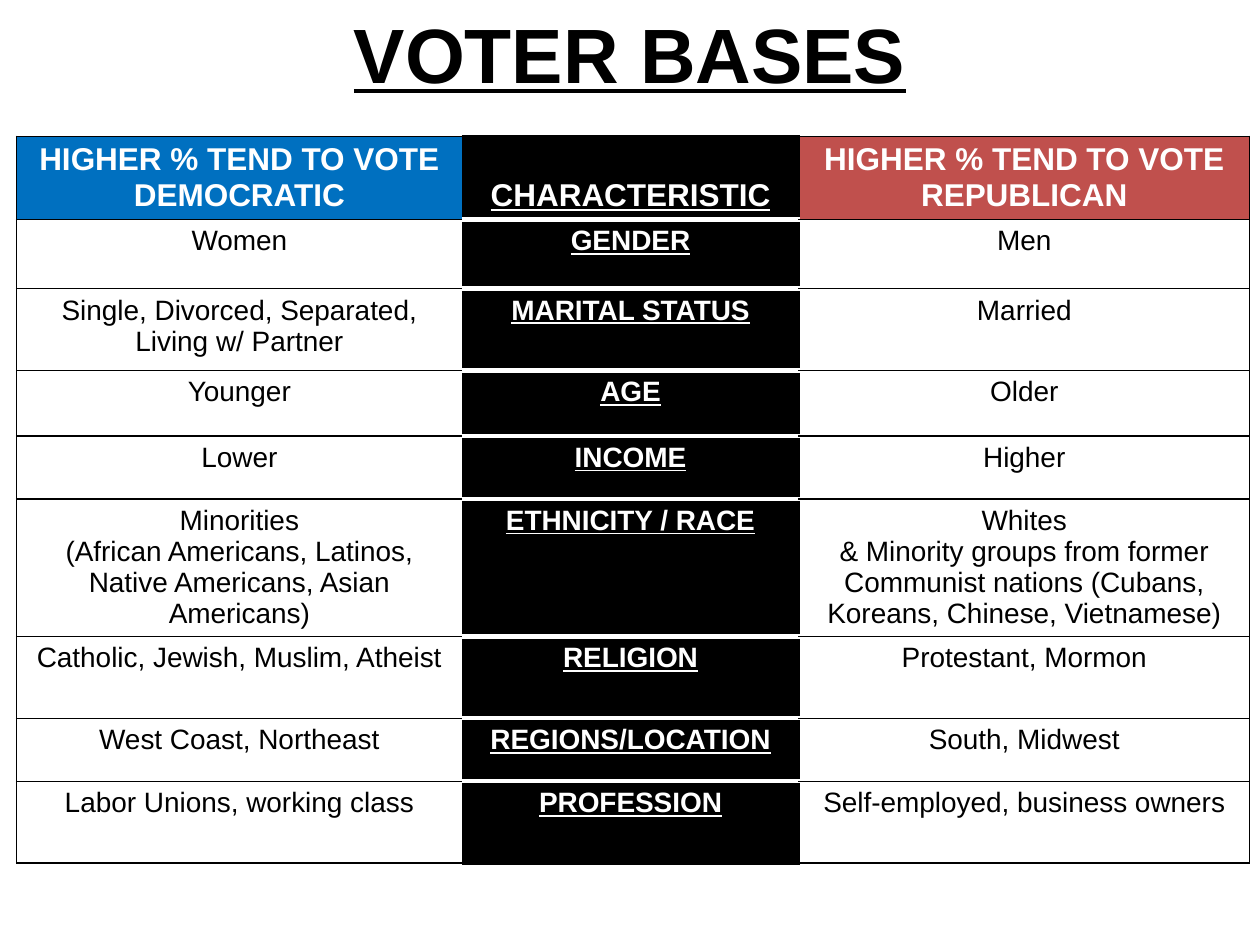
from lxml.etree import SubElement
from pptx import Presentation
from pptx.dml.color import RGBColor
from pptx.enum.text import MSO_ANCHOR, PP_ALIGN
from pptx.oxml.ns import qn
from pptx.util import Inches, Pt

BLACK, WHITE, BLUE, RED = "000000", "FFFFFF", "0070C0", "C0504D"
COLUMN_WIDTHS = [3.54, 2.67, 3.58]
ROW_HEIGHTS = [0.65, 0.55, 0.65, 0.52, 0.5, 1.09, 0.65, 0.5, 0.65]
ROWS = [
    ("HIGHER % TEND TO VOTE DEMOCRATIC", "CHARACTERISTIC",
     "HIGHER % TEND TO VOTE REPUBLICAN"),
    ("Women", "GENDER", "Men"),
    ("Single, Divorced, Separated, Living w/ Partner", "MARITAL STATUS", "Married"),
    ("Younger", "AGE", "Older"),
    ("Lower", "INCOME", "Higher"),
    ("Minorities\n(African Americans, Latinos, Native Americans, Asian Americans)",
     "ETHNICITY / RACE",
     "Whites\n& Minority groups from former Communist nations "
     "(Cubans, Koreans, Chinese, Vietnamese)"),
    ("Catholic, Jewish, Muslim, Atheist", "RELIGION", "Protestant, Mormon"),
    ("West Coast, Northeast", "REGIONS/LOCATION", "South, Midwest"),
    ("Labor Unions, working class", "PROFESSION", "Self-employed, business owners"),
]


def rgb(value):
    return RGBColor.from_string(value)


def style_text(frame, size, color, bold, underline):
    for paragraph in frame.paragraphs:
        paragraph.alignment = PP_ALIGN.CENTER
        font = paragraph.font
        font.name, font.size = "Arial", Pt(size)
        font.bold, font.underline = bold, underline
        font.color.rgb = rgb(color)


def set_borders(cell, left, right, top, bottom):
    properties = cell._tc.get_or_add_tcPr()
    for side, (color, width) in zip("LRTB", (left, right, top, bottom)):
        line = SubElement(properties, qn(f"a:ln{side}"), w=str(Pt(width)))
        SubElement(SubElement(line, qn("a:solidFill")), qn("a:srgbClr"), val=color)


def style_cell(cell, row, column):
    header, middle = row == 0, column == 1
    thin, inner, gap = (BLACK, 0.75), (BLACK, 1), (WHITE, 3)
    if middle:
        top = inner if header else gap
        bottom = (BLACK, 3) if row == len(ROWS) - 1 else gap
        set_borders(cell, inner, inner, top, bottom)
    else:
        left, right = (thin, inner) if column == 0 else (inner, thin)
        set_borders(cell, left, right, thin, thin)
    cell.fill.solid()
    fills = (BLUE, BLACK, RED) if header else (WHITE, BLACK, WHITE)
    cell.fill.fore_color.rgb = rgb(fills[column])
    if header and middle:
        cell.vertical_anchor = MSO_ANCHOR.BOTTOM
    emphasis = header or middle
    style_text(cell.text_frame, 18 if header else 16,
               WHITE if emphasis else BLACK, emphasis, middle)


def place_title(slide, left, top, width, height):
    title = slide.shapes.title
    title.left, title.top, title.width, title.height = left, top, width, height
    title.text_frame.text = "VOTER BASES"
    title.text_frame.vertical_anchor = MSO_ANCHOR.MIDDLE
    style_text(title.text_frame, 44, BLACK, True, True)


def place_voter_table(slide, left, top, width, height):
    table = slide.shapes.add_table(
        len(ROWS), len(COLUMN_WIDTHS), left, top, width, height).table
    for column, column_width in zip(table.columns, COLUMN_WIDTHS):
        column.width = Inches(column_width)
    for row, row_height in zip(table.rows, ROW_HEIGHTS):
        row.height = Inches(row_height)
    for row, texts in enumerate(ROWS):
        for column, text in enumerate(texts):
            cell = table.cell(row, column)
            cell.text = text
            style_cell(cell, row, column)


def main():
    presentation = Presentation()
    presentation.slide_width, presentation.slide_height = Inches(10), Inches(7.5)
    slide = presentation.slides.add_slide(presentation.slide_layouts[5])
    place_title(slide, 0, 0, Inches(10), Inches(0.83))
    place_voter_table(slide, Inches(0.13), Inches(1.08),
                      Inches(sum(COLUMN_WIDTHS)), Inches(sum(ROW_HEIGHTS)))
    presentation.save("out.pptx")


if __name__ == "__main__":
    main()
